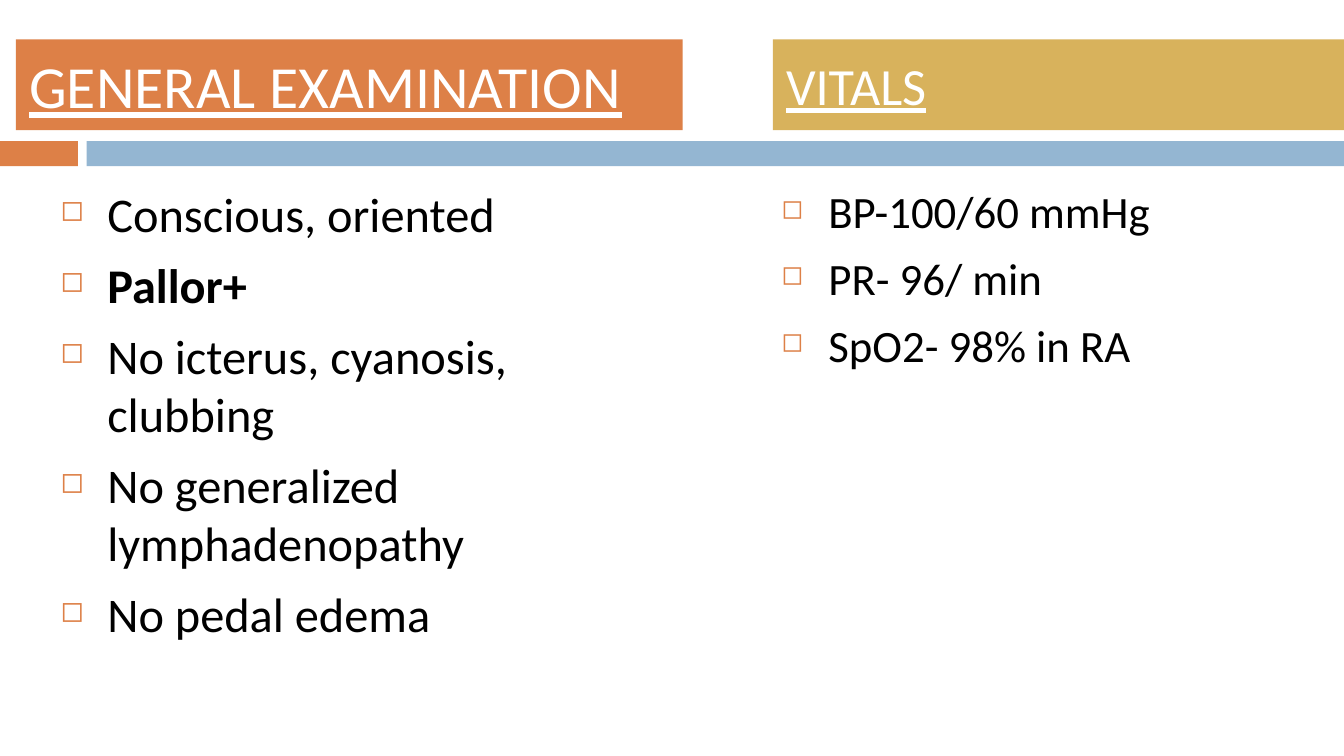
from lxml import etree
from pptx import Presentation
from pptx.dml.color import RGBColor
from pptx.enum.shapes import MSO_SHAPE
from pptx.enum.text import MSO_ANCHOR, PP_ALIGN
from pptx.oxml.ns import qn
from pptx.util import Pt

RECT = MSO_SHAPE.RECTANGLE
MIDDLE = MSO_ANCHOR.MIDDLE
LEFT = PP_ALIGN.LEFT

ORANGE = RGBColor(0xDD, 0x80, 0x47)
BLUE = RGBColor(0x94, 0xB6, 0xD2)
GOLD = RGBColor(0xD8, 0xB2, 0x5C)
WHITE = RGBColor(0xFF, 0xFF, 0xFF)
BLACK = RGBColor(0, 0, 0)

FONT = "Calibri"
INDENT = Pt(25.2)
GAP = Pt(7)

EXAM = [
    "Conscious, oriented",
    "Pallor+",
    "No icterus, cyanosis, clubbing",
    "No generalized lymphadenopathy",
    "No pedal edema",
]
VITALS = ["BP-100/60 mmHg", "PR- 96/ min", "SpO2- 98% in RA"]


def add_bar(slide, left, top, width, height, color):
    bar = slide.shapes.add_shape(RECT, Pt(left), Pt(top), Pt(width), Pt(height))
    bar.shadow.inherit = False
    bar.fill.solid()
    bar.fill.fore_color.rgb = color
    bar.line.fill.background()
    return bar


def set_font(para, size, color):
    para.font.name = FONT
    para.font.size = Pt(size)
    para.font.color.rgb = color


def add_head(slide, text, left, width, size, color):
    frame = add_bar(slide, left, 21.1, width, 48.7, color).text_frame
    frame.word_wrap = True
    frame.vertical_anchor = MIDDLE
    para = frame.paragraphs[0]
    para.text = text
    para.alignment = LEFT
    para.space_before = GAP
    set_font(para, size, WHITE)
    para.font.underline = True


def add_bullet(para):
    props = para._p.get_or_add_pPr()
    props.set("marL", str(INDENT))
    props.set("indent", str(-INDENT))
    tint = etree.SubElement(props, qn("a:buClr"))
    etree.SubElement(tint, qn("a:srgbClr"), val=str(ORANGE))
    etree.SubElement(props, qn("a:buSzPct"), val="60000")
    etree.SubElement(props, qn("a:buChar"), char="◻")


def add_list(slide, items, left, size, strong=()):
    box = slide.shapes.add_textbox(Pt(left), Pt(95), Pt(306), Pt(211.7))
    frame = box.text_frame
    frame.word_wrap = True
    for i, item in enumerate(items):
        para = frame.add_paragraph() if i else frame.paragraphs[0]
        para.text = item
        para.space_before = GAP
        add_bullet(para)
        set_font(para, size, BLACK)
        para.font.bold = item in strong


def main():
    deck = Presentation()
    deck.slide_width, deck.slide_height = Pt(720), Pt(405)
    slide = deck.slides.add_slide(deck.slide_layouts[6])

    # Divider band
    add_bar(slide, 0, 75.6, 41.8, 13.5, ORANGE)
    add_bar(slide, 46.5, 75.6, 673.5, 13.5, BLUE)

    # Findings
    add_list(slide, EXAM, 25.2, 25.9, strong=("Pallor+",))
    add_list(slide, VITALS, 411.5, 24)

    # Column headings
    add_head(slide, "GENERAL EXAMINATION", 8.6, 357.1, 32, ORANGE)
    add_head(slide, "VITALS", 414, 306, 28, GOLD)

    deck.save("out.pptx")


if __name__ == "__main__":
    main()
